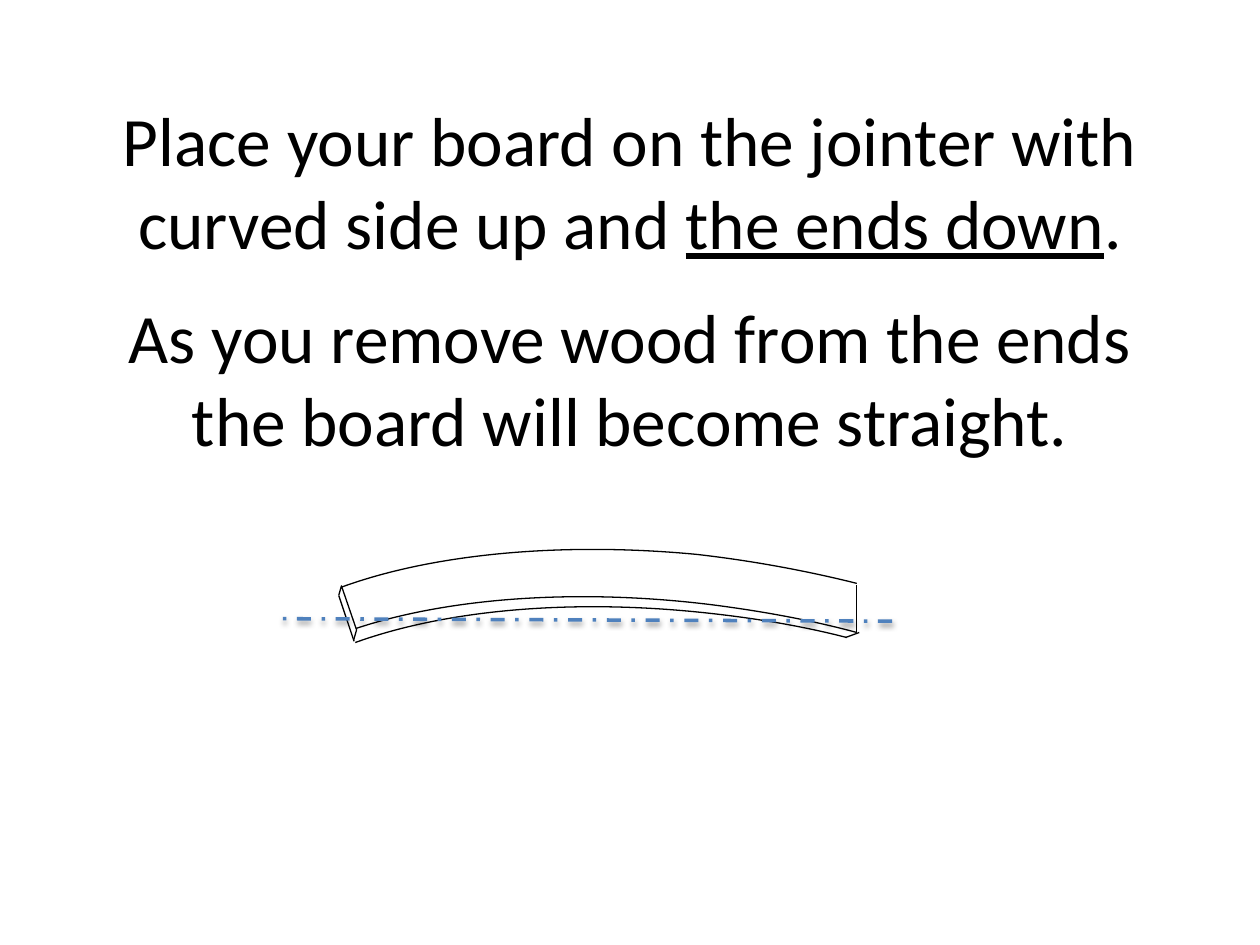
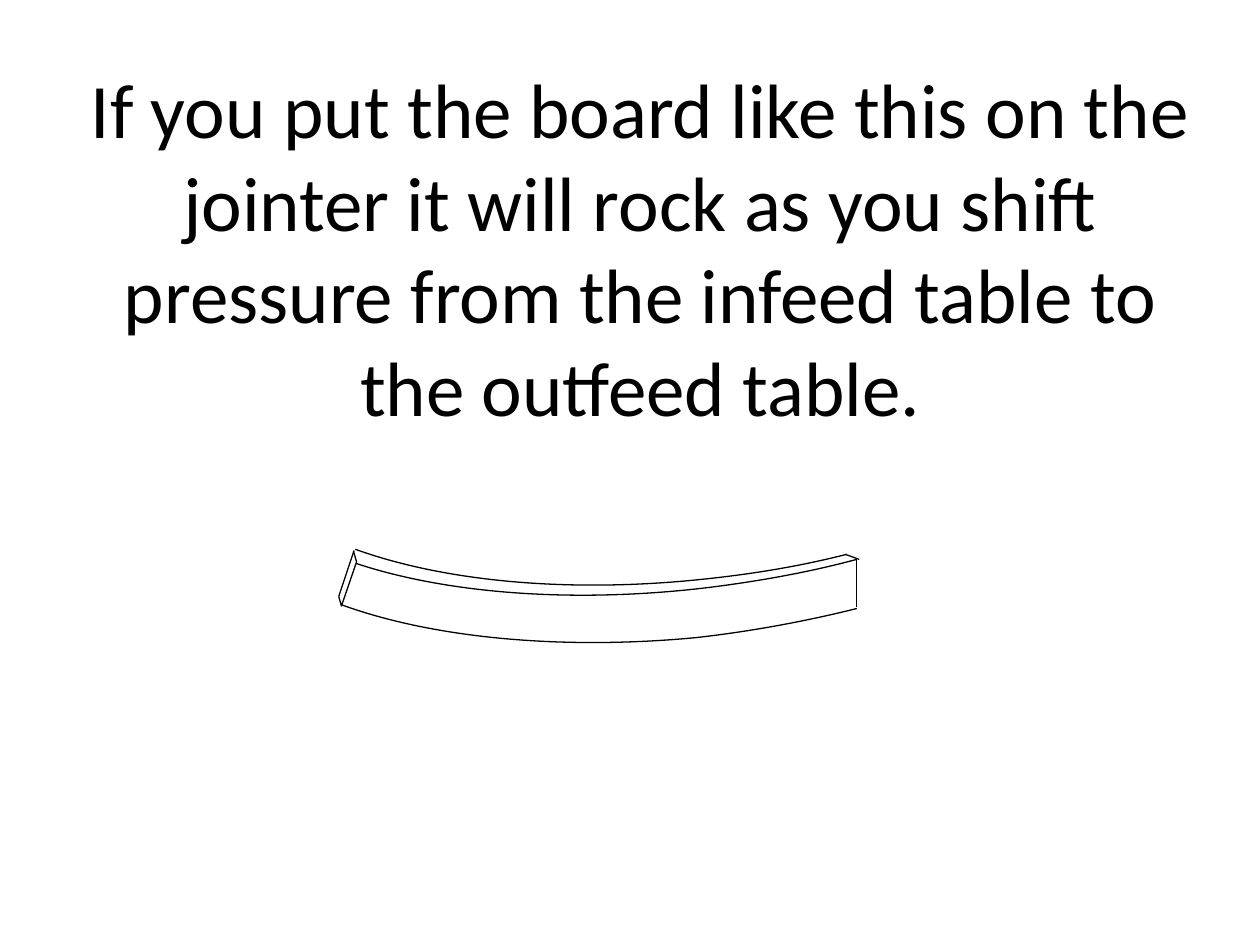
from copy import deepcopy
from dataclasses import dataclass

from lxml import etree
from pptx import Presentation
from pptx import util as u
from pptx.dml.color import RGBColor
from pptx.enum import dml, shapes, text
from pptx.oxml.ns import qn


@dataclass(frozen=True)
class Theme:
    font: str = "Calibri"
    ink: str = "000000"
    paper: str = "FFFFFF"
    accent: str = "4F81BD"
    title_size: float = 44
    long_title_size: float = 39.6
    paragraph_gap: float = 17.5
    board_line: float = 0.75
    cut_line: float = 2


# Arched board: each edge runs from right to left through two Bezier segments
# and ends with the centre of its arc.
BOTTOM_EDGE = [(6.72, 5.06), (6.37, 4.97), (6.01, 4.91), (5.65, 4.87),
               (4.59, 4.75), (3.57, 4.83), (2.82, 5.1), (5.46, 6.51)]
TOP_EDGE = [(6.8, 4.63), (6.4, 4.53), (5.97, 4.45), (5.53, 4.4),
            (4.48, 4.3), (3.45, 4.39), (2.71, 4.66), (5.37, 6.05)]
MIDDLE_EDGE = [(6.8, 5.02), (6.43, 4.92), (6.04, 4.85), (5.65, 4.8),
               (4.6, 4.67), (3.57, 4.74), (2.82, 4.99), (5.45, 6.44)]
RIGHT_SIDE = [(6.8, 5.02), (6.8, 4.64)]
RIGHT_CORNER = [(6.71, 5.06), (6.82, 5.02)]
LEFT_FACE = [(2.71, 4.65), (2.83, 5), (2.77, 5.21), (2.65, 4.86)]
LEFT_SIDE = [(2.81, 5.09), (2.69, 4.73)]
# Trims, as left, top, width, height, rotation.
LEFT_TRIM = (2.54, 4.74, 0.25, 0.63, 161.2)
RIGHT_TRIM = (6.82, 4.93, 0.13, 0.12, 91.1)
BOARD_MIDDLE = 4.73


class SlideMaker:
    def __init__(self, deck, theme):
        self.deck = deck
        self.theme = theme
        self.slide = None

    def new_slide(self):
        self.slide = self.deck.slides.add_slide(self.deck.slide_layouts[5])
        self.paint(self.slide.background.fill)

    def paint(self, fill):
        fill.solid()
        fill.fore_color.rgb = RGBColor.from_string(self.theme.paper)

    def title(self, left, top, width, height, paragraphs, size):
        """Fill the title; each paragraph is a list of (words, underlined)."""
        box = self.slide.shapes.title
        box.left, box.top = u.Inches(left), u.Inches(top)
        box.width, box.height = u.Inches(width), u.Inches(height)
        frame = box.text_frame
        frame.auto_size = text.MSO_AUTO_SIZE.NONE
        frame.word_wrap = True
        frame.vertical_anchor = text.MSO_ANCHOR.MIDDLE
        for index, runs in enumerate(paragraphs):
            para = frame.add_paragraph() if index else frame.paragraphs[0]
            para.alignment = text.PP_ALIGN.CENTER
            para.space_before = u.Pt(self.theme.paragraph_gap if index else 0)
            for words, underlined in runs:
                span = para.add_run()
                span.text = words
                span.font.name = self.theme.font
                span.font.size = u.Pt(size)
                span.font.underline = underlined
                span.font.color.rgb = RGBColor.from_string(self.theme.ink)

    def line(self, parent, ends, color, width):
        lengths = [u.Inches(value) for point in ends for value in point]
        line = parent.add_connector(shapes.MSO_CONNECTOR.STRAIGHT, *lengths)
        line.line.color.rgb = RGBColor.from_string(color)
        line.line.width = u.Pt(width)
        etree.SubElement(line._element.spPr, qn("a:effectLst"))
        return line

    def outline(self, parent, points):
        corners = [(u.Inches(x), u.Inches(y)) for x, y in points]
        builder = parent.build_freeform(*corners[0])
        builder.add_line_segments(corners[1:], close=True)
        shape = builder.convert_to_shape()
        shape.shadow.inherit = False
        shape.line.color.rgb = RGBColor.from_string(self.theme.ink)
        shape.line.width = u.Pt(self.theme.board_line)
        self.paint(shape.fill)
        return shape

    def arc(self, parent, points):
        """Draw a curved edge as a stroked arc over its unstroked sector."""
        shape = self.outline(parent, points)
        shape.fill.background()
        sector = next(shape._element.iter(qn("a:path")))
        *controls, to_centre = sector.findall(qn("a:lnTo"))
        for first in range(0, len(controls), 3):
            curve = etree.Element(qn("a:cubicBezTo"))
            to_centre.addprevious(curve)
            for control in controls[first:first + 3]:
                curve.append(control[0])
                sector.remove(control)
        stroke = deepcopy(sector)
        for tag in ("a:lnTo", "a:close"):
            stroke.remove(stroke.find(qn(tag)))
        sector.addprevious(stroke)
        sector.set("stroke", "0")

    def trim(self, parent, left, top, width, height, rotation):
        lengths = [u.Inches(value) for value in (left, top, width, height)]
        shape = parent.add_shape(shapes.MSO_SHAPE.RECTANGLE, *lengths)
        shape.rotation = rotation
        shape.shadow.inherit = False
        shape.line.fill.background()
        self.paint(shape.fill)

    def board(self, ends_down):
        def place(points):
            return [(x, y if ends_down else 2 * BOARD_MIDDLE - y) for x, y in points]

        def place_trim(left, top, width, height, rotation):
            if ends_down:
                return left, top, width, height, rotation
            return left, 2 * BOARD_MIDDLE - top - height, width, height, 360 - rotation

        def edge_line(ends):
            self.line(parts, place(ends), self.theme.ink, self.theme.board_line)

        parts = self.slide.shapes.add_group_shape().shapes
        self.arc(parts, place(BOTTOM_EDGE))
        self.arc(parts, place(TOP_EDGE))
        edge_line(RIGHT_SIDE)
        self.arc(parts, place(MIDDLE_EDGE))
        edge_line(RIGHT_CORNER)
        self.outline(parts, place(LEFT_FACE))
        self.trim(parts, *place_trim(*LEFT_TRIM))
        edge_line(LEFT_SIDE)
        self.trim(parts, *place_trim(*RIGHT_TRIM))

    def cut_line(self, start, end):
        line = self.line(self.slide.shapes, (start, end),
                         self.theme.accent, self.theme.cut_line)
        line.line.dash_style = dml.MSO_LINE.DASH_DOT
        effects = line._element.spPr.find(qn("a:effectLst"))
        shadow = etree.SubElement(effects, qn("a:outerShdw"), blurRad="40000",
                                  dist="20000", dir="5400000", rotWithShape="0")
        color = etree.SubElement(shadow, qn("a:srgbClr"), val=self.theme.ink)
        etree.SubElement(color, qn("a:alpha"), val="38000")


def main():
    deck = Presentation()
    deck.slide_width, deck.slide_height = u.Inches(10), u.Inches(7.5)
    theme = Theme()
    maker = SlideMaker(deck, theme)

    maker.new_slide()
    maker.board(ends_down=True)
    maker.title(0.5, 0.3, 9, 3.82, [
        [("Place your board on the jointer with curved side up and ", False),
         ("the ends down", True), (".", False)],
        [("As you remove wood from the ends the board will become straight.", False)],
    ], theme.long_title_size)
    maker.cut_line((7.08, 4.93), (2.17, 4.91))

    maker.new_slide()
    maker.board(ends_down=False)
    maker.title(7 / 12, 1 / 3, 9, 3.25, [
        [("If you put the board like this on the jointer it will rock as you shift "
          "pressure from the infeed table to the outfeed table.", False)],
    ], theme.title_size)

    deck.save("out.pptx")


if __name__ == "__main__":
    main()
